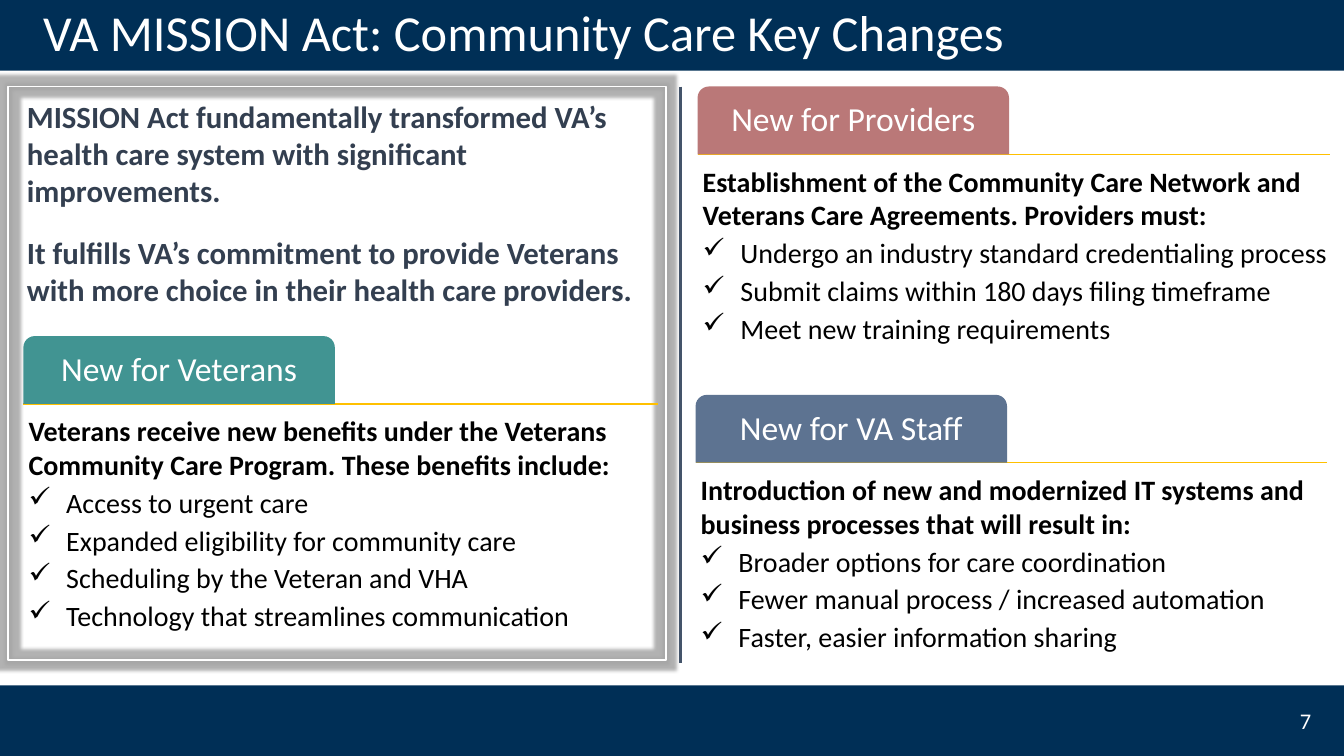
from lxml import etree
from pptx import Presentation
from pptx import util as u
from pptx.dml.color import RGBColor
from pptx.enum import shapes, text
from pptx.oxml import ns, parse_xml

COLORS = {
    "navy": "002F56", "white": "FFFFFF", "black": "000000", "gold": "FFC000",
    "rose": "BA7878", "slate": "5D7391", "teal": "419492",
    "ink": "333F50", "divider": "44546A", "glow": "A5A5A5",
}
FONT = "Calibri"
PAGE_WIDTH, PAGE_HEIGHT, BAR_HEIGHT = 33.87, 19.05, 1.78
TAB_WIDTH, TAB_HEIGHT = 7.85, 1.71
HANGING = 0.95
CONTENT_TOP = 2.18

PANELS = {
    "providers": ((17.58, CONTENT_TOP, 15.93, 8.19), "rose", "New for Providers",
                  "Establishment of the Community Care Network and Veterans Care Agreements. Providers must:",
                  ["Undergo an industry standard credentialing process",
                   "Submit claims within 180 days filing timeframe",
                   "Meet new training requirements"]),
    "staff": ((17.53, 9.95, 15.9, 6.46), "slate", "New for VA Staff",
              "Introduction of new and modernized IT systems and business processes that will result in:",
              ["Broader options for care coordination",
               "Fewer manual process / increased automation",
               "Faster, easier information sharing"]),
    "veterans": ((0.59, 8.47, 16, 8.19), "teal", "New for Veterans",
                 "Veterans receive new benefits under the Veterans Community Care Program. These benefits include:",
                 ["Access to urgent care",
                  "Expanded eligibility for community care",
                  "Scheduling by the Veteran and VHA",
                  "Technology that streamlines communication"]),
}
INTRO = [
    ("MISSION Act fundamentally transformed VA’s health care system with significant improvements.", 18),
    ("It fulfills VA’s commitment to provide Veterans with more choice in their health care providers.", 6),
]


def color(name):
    return RGBColor.from_string(COLORS[name])


def add_filled(page, kind, box, fill):
    shape = page.shapes.add_shape(kind, *map(u.Cm, box))
    shape.shadow.inherit = False
    shape.fill.solid()
    shape.fill.fore_color.rgb = color(fill)
    shape.line.fill.background()
    return shape


def add_line(page, start, end, name, width):
    line = page.shapes.add_connector(
        shapes.MSO_CONNECTOR.STRAIGHT, *map(u.Cm, start + end))
    line.line.color.rgb = color(name)
    line.line.width = u.Pt(width)
    etree.SubElement(line._element.spPr, ns.qn("a:effectLst"))


def prepare_frame(shape, insets=(0.25, 0.13, 0.25, 0.13), middle=False):
    frame = shape.text_frame
    frame.word_wrap = True
    frame.margin_left, frame.margin_top, frame.margin_right, frame.margin_bottom = map(u.Cm, insets)
    frame.vertical_anchor = text.MSO_ANCHOR.MIDDLE if middle else text.MSO_ANCHOR.TOP
    return frame


def add_text_box(page, box, middle=False):
    return prepare_frame(page.shapes.add_textbox(*map(u.Cm, box)), middle=middle)


def add_span(para, words, size, name, bold=False):
    span = para.add_run()
    span.text = words
    span.font.name = FONT
    span.font.size = u.Pt(size)
    span.font.bold = bold
    span.font.color.rgb = color(name)


def next_para(frame):
    first = frame.paragraphs[0]
    return frame.add_paragraph() if first.runs else first


def add_check(para):
    props = para._p.get_or_add_pPr()
    props.set("marL", str(u.Cm(HANGING)))
    props.set("indent", str(-u.Cm(HANGING)))
    etree.SubElement(props, ns.qn("a:buChar")).set("char", "✓")


def add_bars(page):
    for top in (PAGE_HEIGHT - BAR_HEIGHT, 0):
        add_filled(page, shapes.MSO_SHAPE.RECTANGLE, (0, top, PAGE_WIDTH, BAR_HEIGHT), "navy")
    number = add_text_box(page, (32.51, 17.7, 1.35, 0.94))
    add_span(number.paragraphs[0], "7", 16, "white")
    title = add_text_box(page, (0.84, -0.05, 31.9, 1.88), middle=True).paragraphs[0]
    title.line_spacing = 0.9
    add_span(title, "VA MISSION Act: Community Care Key Changes", 36, "white")


def add_panel(page, box, fill, heading, lead, points):
    left, top, width, height = box
    base = top + TAB_HEIGHT
    add_line(page, (left, base), (left + width, base), "gold", 1)

    tab = add_filled(page, shapes.MSO_SHAPE.ROUND_2_SAME_RECTANGLE,
                     (left, top, TAB_WIDTH, TAB_HEIGHT), fill)
    label = prepare_frame(tab, (0.1, 0.1, 0.1, 0.15), middle=True).paragraphs[0]
    label.alignment = text.PP_ALIGN.CENTER
    label.line_spacing = 0.9
    add_span(label, heading, 24, "white")

    body = page.shapes.add_textbox(*map(u.Cm, (left, base, width, height - TAB_HEIGHT)))
    frame = prepare_frame(body, (0.13, 0.25, 0.03, 0.03))
    for words in [lead] + points:
        para = next_para(frame)
        para.space_after = u.Pt(3)
        if words != lead:
            add_check(para)
        add_span(para, words, 20, "black", bold=words == lead)


def add_glowing_frame(page, box):
    border = page.shapes.add_shape(shapes.MSO_SHAPE.RECTANGLE, *map(u.Cm, box))
    border.fill.background()
    border.line.color.rgb = color("white")
    border.line.width = u.Pt(1)
    border._element.spPr.append(parse_xml(
        f'<a:effectLst {ns.nsdecls("a")}>'
        f'<a:glow rad="{u.Pt(5)}"><a:srgbClr val="{COLORS["glow"]}">'
        '<a:alpha val="85000"/></a:srgbClr></a:glow>'
        '</a:effectLst>'))


def add_intro(page, box):
    frame = add_text_box(page, box)
    for words, gap in INTRO:
        para = next_para(frame)
        para.space_after = u.Pt(gap)
        add_span(para, words, 22, "ink", bold=True)


def main():
    deck = Presentation()
    deck.slide_width, deck.slide_height = u.Cm(PAGE_WIDTH), u.Cm(PAGE_HEIGHT)
    page = deck.slides.add_slide(deck.slide_layouts[6])
    add_glowing_frame(page, (0.2, CONTENT_TOP, 16.59, 14.45))
    add_bars(page)
    for panel in PANELS.values():
        add_panel(page, *panel)
    add_intro(page, (0.43, 2.34, 16.51, 5.59))
    add_line(page, (17.15, CONTENT_TOP), (17.15, 16.71), "divider", 2.25)
    deck.save("out.pptx")


if __name__ == "__main__":
    main()
